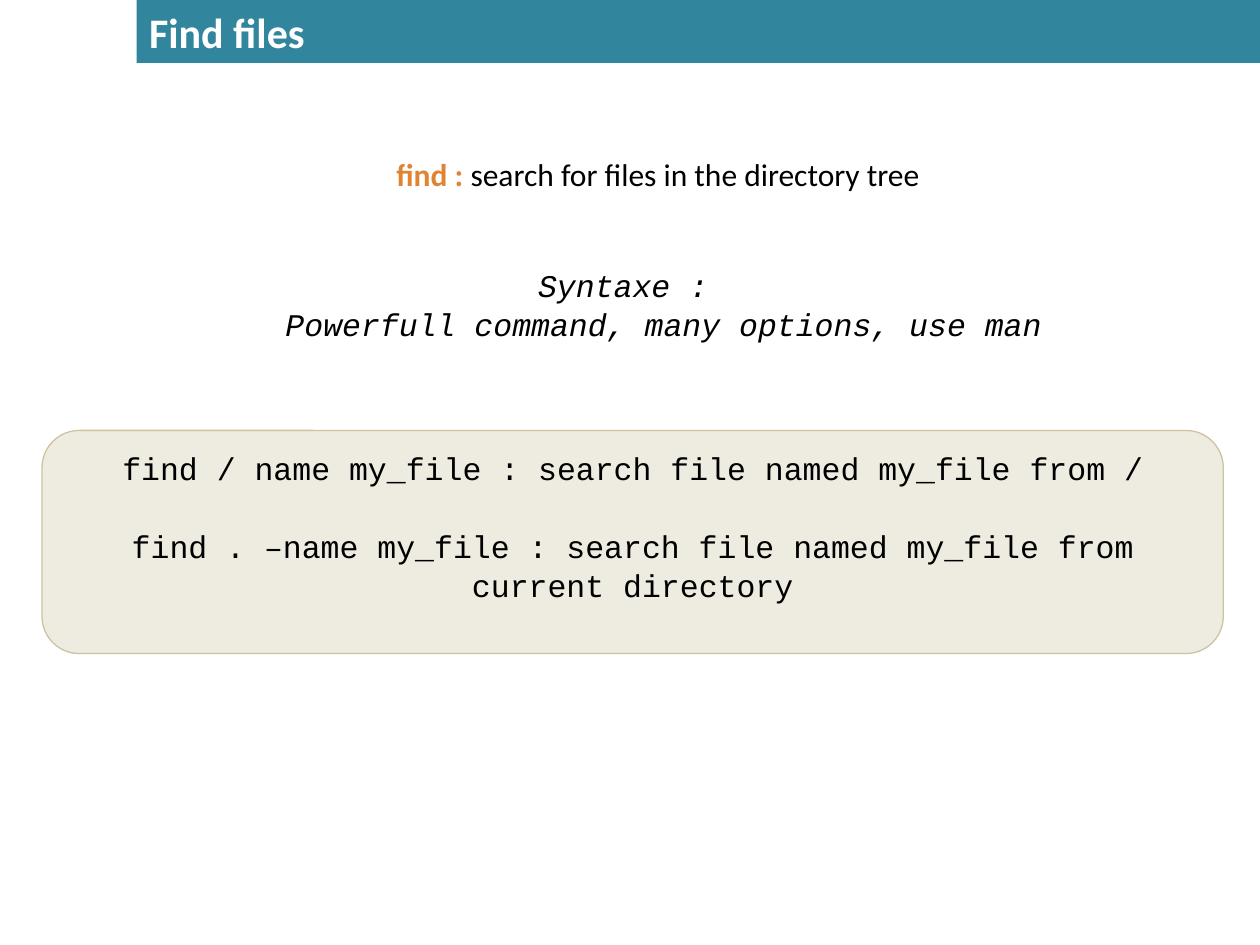
from dataclasses import dataclass

from lxml import etree
from pptx import Presentation
from pptx.dml.color import RGBColor
from pptx.enum import shapes, text
from pptx.oxml import ns
from pptx.util import Pt


@dataclass(frozen=True)
class Theme:
    """Colours, fonts and type sizes of the deck."""
    teal: str = "31859C"
    orange: str = "E08434"
    sand: str = "EEECE1"
    sand_edge: str = "CEC3A0"
    white: str = "FFFFFF"
    black: str = "000000"
    body_font: str = "Calibri"
    code_font: str = "Courier New"
    title_size: int = 24
    body_size: int = 18


THEME = Theme()
TAB_STEP = 35.35
TAB_COUNT = 8
CODE_SPACING = 1.04


def style_span(span, font, size, color, bold=False, italic=False):
    """Format one run."""
    span.font.name = font
    span.font.size = Pt(size)
    span.font.color.rgb = RGBColor.from_string(color)
    span.font.bold = bold
    span.font.italic = italic


def add_tabs(para):
    """Give a paragraph evenly spaced left tab stops."""
    tabs = etree.SubElement(para._p.get_or_add_pPr(), ns.qn("a:tabLst"))
    for index in range(TAB_COUNT):
        position = Pt(TAB_STEP * index)
        etree.SubElement(tabs, ns.qn("a:tab"), pos=str(position), algn="l")


def write_code(frame, lines, gap=0, italic=False):
    """Fill a frame with centred monospaced paragraphs."""
    frame.word_wrap = True
    frame.text = "\n".join(lines)
    for index, para in enumerate(frame.paragraphs):
        para.alignment = text.PP_ALIGN.CENTER
        para.line_spacing = CODE_SPACING
        if index and gap:
            para.space_before = Pt(gap)
        add_tabs(para)
        for span in para.runs:
            style_span(span, THEME.code_font, THEME.body_size, THEME.black, italic=italic)


def place_title(page, box, heading):
    """Turn the title placeholder into a coloured banner."""
    title = page.shapes.title
    title.left, title.top, title.width, title.height = map(Pt, box)
    title.fill.solid()
    title.fill.fore_color.rgb = RGBColor.from_string(THEME.teal)
    frame = title.text_frame
    frame.text = heading
    frame.vertical_anchor = text.MSO_ANCHOR.MIDDLE
    para = frame.paragraphs[0]
    para.alignment = text.PP_ALIGN.LEFT
    style_span(para.runs[0], THEME.body_font, THEME.title_size, THEME.white, bold=True)


def place_definition(page, box, command, meaning):
    """Show a command name followed by its meaning."""
    frame = page.shapes.add_textbox(*map(Pt, box)).text_frame
    frame.word_wrap = True
    para = frame.paragraphs[0]
    para.alignment = text.PP_ALIGN.CENTER
    for words, color, bold in ((command, THEME.orange, True), (meaning, THEME.black, False)):
        span = para.add_run()
        span.text = words
        style_span(span, THEME.body_font, THEME.body_size, color, bold)


def place_syntax(page, box, lines):
    """Show the syntax note in italics."""
    frame = page.shapes.add_textbox(*map(Pt, box)).text_frame
    write_code(frame, lines, italic=True)


def place_examples(page, box, lines):
    """Show the example commands in a rounded panel."""
    panel = page.shapes.add_shape(shapes.MSO_SHAPE.ROUNDED_RECTANGLE, *map(Pt, box))
    panel.shadow.inherit = False
    panel.fill.solid()
    panel.fill.fore_color.rgb = RGBColor.from_string(THEME.sand)
    panel.line.color.rgb = RGBColor.from_string(THEME.sand_edge)
    panel.line.width = Pt(0.75)
    panel.text_frame.vertical_anchor = text.MSO_ANCHOR.TOP
    write_code(panel.text_frame, lines, gap=22)


def main():
    """Build and save the deck."""
    deck = Presentation()
    deck.slide_width, deck.slide_height = Pt(720), Pt(540)
    page = deck.slides.add_slide(deck.slide_layouts.get_by_name("Title Only"))
    place_title(page, (78, 0, 642, 36), "Find files")
    place_definition(page, (137, 85, 478, 29), "find : ",
                     "search for files in the directory tree")
    place_examples(page, (24, 246, 675, 127.5), (
        "find / name my_file : search file named my_file from /",
        "find . –name my_file : search file named my_file from current directory",
    ))
    place_syntax(page, (13.5, 147.5, 696, 52.5), (
        "Syntaxe : ",
        "\tPowerfull command, many options, use man",
    ))
    deck.save("out.pptx")


if __name__ == "__main__":
    main()
